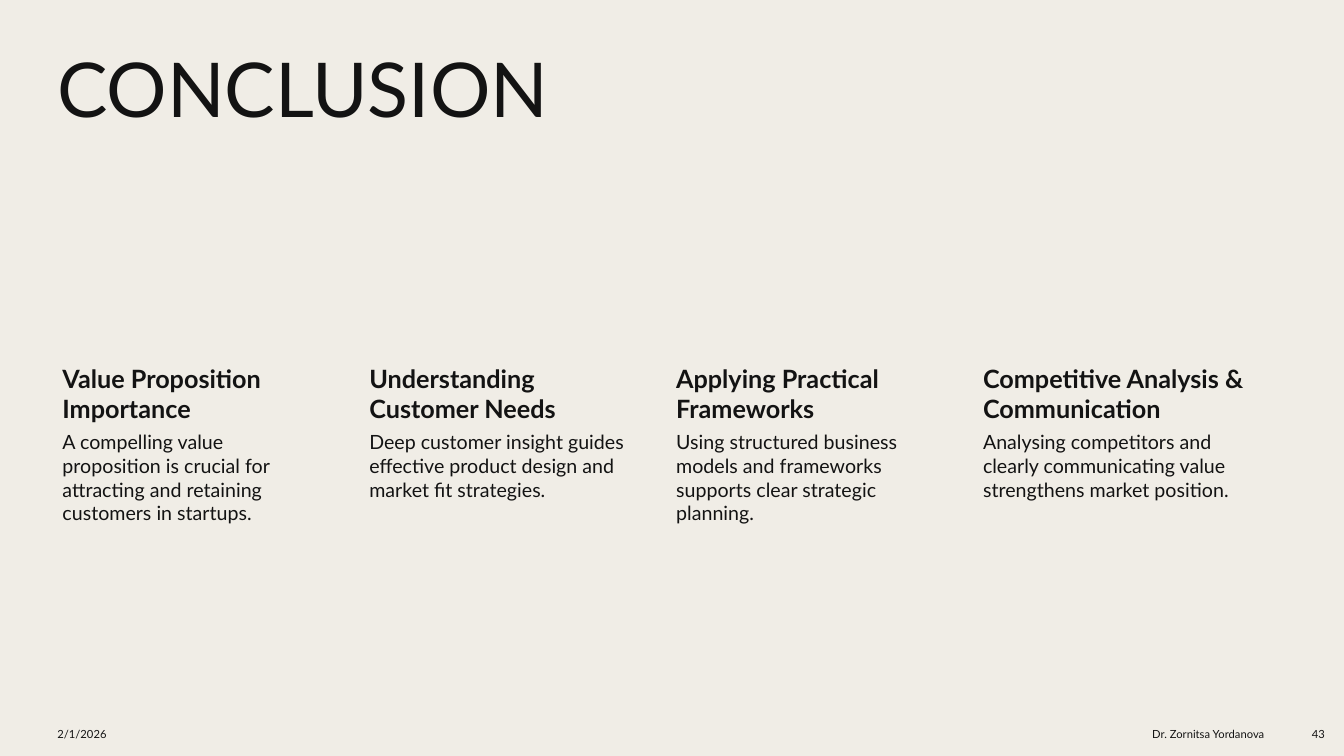
"""Build the four-column conclusion slide."""
import pptx
import pptx.dml.color
import pptx.enum.text
import pptx.util

Inches = pptx.util.Inches
ALIGN = pptx.enum.text.PP_ALIGN
ANCHOR = pptx.enum.text.MSO_ANCHOR

TITLE = "CONCLUSION"
TAKEAWAYS = [
    ("Value Proposition Importance",
     "A compelling value proposition is crucial for attracting and retaining customers in startups."),
    ("Understanding Customer Needs",
     "Deep customer insight guides effective product design and market fit strategies."),
    ("Applying Practical Frameworks",
     "Using structured business models and frameworks supports clear strategic planning."),
    ("Competitive Analysis & Communication",
     "Analysing competitors and clearly communicating value strengthens market position."),
]
FOOTER = [
    ("2/1/2026", 0.47, 3.11, ALIGN.LEFT),
    ("Dr. Zornitsa Yordanova", 9.73, 2.91, ALIGN.RIGHT),
    ("43", 12.74, 0.5, ALIGN.RIGHT),
]

BACKGROUND, INK = "F0EDE6", "131313"
MARGIN, LAST_COLUMN, COLUMN_WIDTH = 0.47, 9.6, 2.77
HEADING_TOP, HEADING_HEIGHT, BODY_HEIGHT = 3.57, 0.68, 2.4
FOOTER_TOP, FOOTER_HEIGHT = 7.1, 0.37


def paint(color, value):
    color.rgb = pptx.dml.color.RGBColor.from_string(value)


def add_text(slide, text, *, at, size, bold=False, align=ALIGN.LEFT,
             anchor=ANCHOR.TOP, insets=(0.1, 0.05, 0.1, 0.05), spacing=1.0):
    frame = slide.shapes.add_textbox(*map(Inches, at)).text_frame
    frame.word_wrap = True
    frame.vertical_anchor = anchor
    (frame.margin_left, frame.margin_top,
     frame.margin_right, frame.margin_bottom) = map(Inches, insets)
    paragraph = frame.paragraphs[0]
    paragraph.alignment = align
    paragraph.line_spacing = spacing
    run = paragraph.add_run()
    run.text = text
    run.font.name = "Lato"
    run.font.size = pptx.util.Pt(size)
    run.font.bold = bold
    paint(run.font.color, INK)


def main():
    deck = pptx.Presentation()
    deck.slide_width, deck.slide_height = Inches(13.33), Inches(7.5)
    slide = deck.slides.add_slide(deck.slide_layouts[6])
    slide.background.fill.solid()
    paint(slide.background.fill.fore_color, BACKGROUND)

    add_text(slide, TITLE, at=(MARGIN, 0.47, 11.91, 1.78), size=54, spacing=0.9)

    pitch = (LAST_COLUMN - MARGIN) / (len(TAKEAWAYS) - 1)
    for column, (heading, body) in enumerate(TAKEAWAYS):
        left = MARGIN + column * pitch
        add_text(slide, heading, at=(left, HEADING_TOP, COLUMN_WIDTH, HEADING_HEIGHT),
                 size=18, bold=True, insets=(0.15, 0.03, 0.03, 0.03))
        add_text(slide, body,
                 at=(left, HEADING_TOP + HEADING_HEIGHT, COLUMN_WIDTH, BODY_HEIGHT),
                 size=14, insets=(0.15, 0.02, 0.02, 0.02))

    for text, left, width, align in FOOTER:
        add_text(slide, text, at=(left, FOOTER_TOP, width, FOOTER_HEIGHT),
                 size=8, align=align, anchor=ANCHOR.MIDDLE)

    deck.save("out.pptx")


if __name__ == "__main__":
    main()
